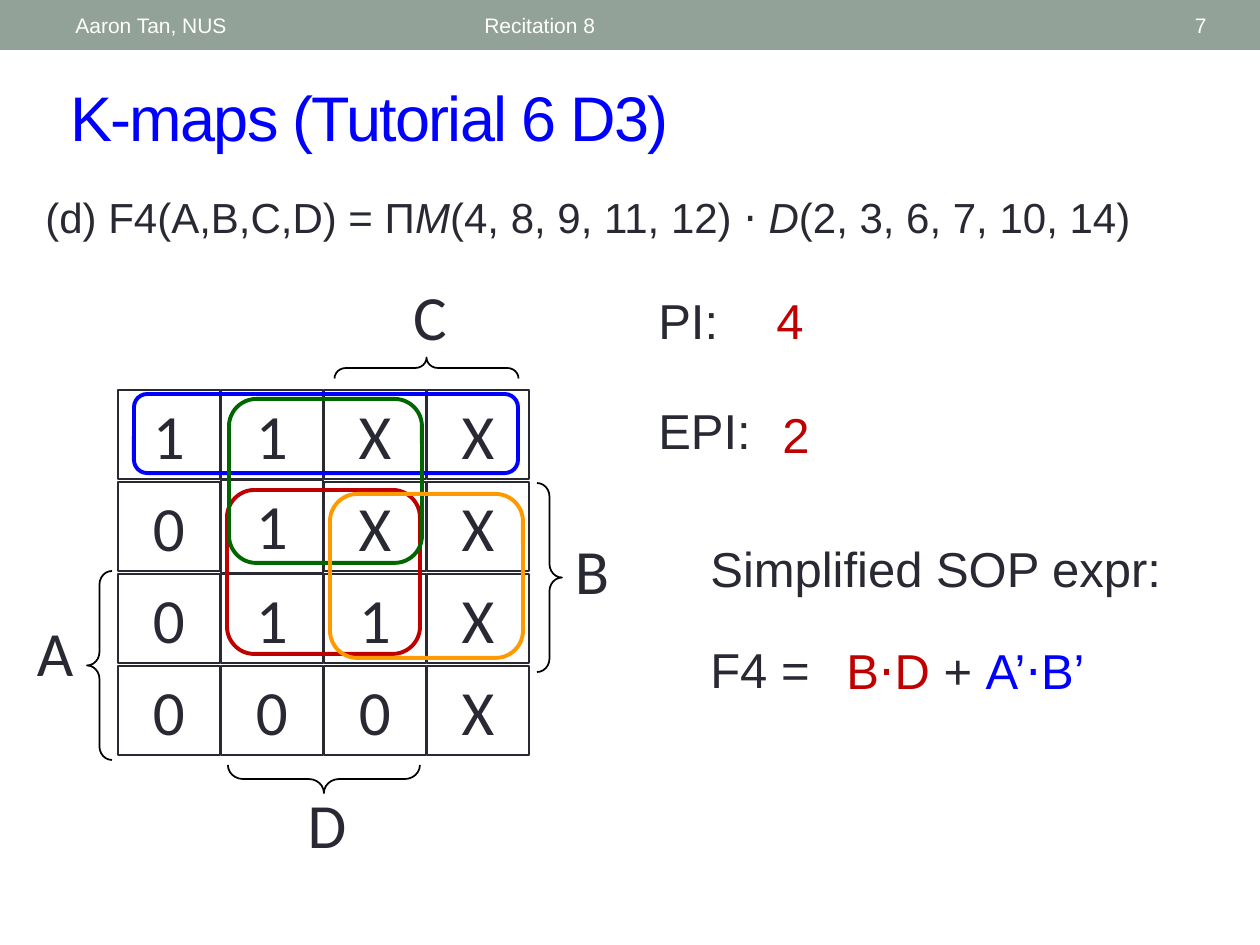
from pptx import Presentation
from pptx.dml.color import RGBColor
from pptx.enum.shapes import MSO_SHAPE
from pptx.enum.text import MSO_ANCHOR, MSO_AUTO_SIZE, PP_ALIGN
from pptx.util import Emu, Pt

EMU_PER_PX = 914400 / 126
INK, RED, BLUE, GREEN, ORANGE = "292934", "C00000", "0000FF", "006600", "FF9900"
WHITE, BLACK, SAGE = "FFFFFF", "000000", "93A299"


def px(length):
    return Emu(round(length * EMU_PER_PX))


def rgb(hex_string):
    return RGBColor.from_string(hex_string)


def apply(target, values):
    for name, value in values.items():
        setattr(target, name, value)


class SlideBuilder:
    """Holds the text style and the slide being drawn."""

    body = {"name": "Arial", "size": Pt(28)}
    small = {"name": "Arial", "size": Pt(12)}
    formula = {"name": "Arial", "size": Pt(24)}
    title = {"name": "Arial", "size": Pt(36)}
    kmap = {"name": "Calibri", "size": Pt(36)}

    def __init__(self, slide):
        self.slide = slide

    def fill_text(self, shape, runs, font, align=PP_ALIGN.LEFT, anchor=MSO_ANCHOR.TOP):
        """Fill a shape with one paragraph of (text, colour, italic) runs."""
        frame = shape.text_frame
        apply(frame, {"word_wrap": True, "vertical_anchor": anchor,
                      "auto_size": MSO_AUTO_SIZE.NONE})
        paragraph = frame.paragraphs[0]
        paragraph.alignment = align
        for text, colour, italic in runs:
            run = paragraph.add_run()
            run.text = text
            apply(run.font, {**font, "italic": italic})
            run.font.color.rgb = rgb(colour)
        return paragraph

    def text(self, box, runs, font, **layout):
        shape = self.slide.shapes.add_textbox(*map(px, box))
        return self.fill_text(shape, runs, font, **layout)

    def label(self, box, text, font, colour=INK, **layout):
        return self.text(box, [(text, colour, False)], font, **layout)

    def shape(self, kind, box, line=None, width=1, fill=None):
        shape = self.slide.shapes.add_shape(kind, *map(px, box))
        shape.shadow.inherit = False
        if fill:
            shape.fill.solid()
            shape.fill.fore_color.rgb = rgb(fill)
        else:
            shape.fill.background()
        if line:
            shape.line.color.rgb = rgb(line)
            shape.line.width = Pt(width)
        else:
            shape.line.fill.background()
        return shape

    def cell(self, box, value):
        shape = self.shape(MSO_SHAPE.RECTANGLE, box, INK)
        self.fill_text(shape, [(value, INK, False)], self.kmap, align=PP_ALIGN.CENTER)

    def brace(self, box, rotation):
        shape = self.shape(MSO_SHAPE.LEFT_BRACE, box, BLACK)
        shape.adjustments[0] = 0.54
        shape.rotation = rotation

    def loop(self, box, colour):
        self.shape(MSO_SHAPE.ROUNDED_RECTANGLE, box, colour, 2.25)


def draw_header(builder):
    builder.shape(MSO_SHAPE.RECTANGLE, (0, 0, 1260, 50), fill=SAGE)
    for left, width, text, align in (
        (63, 399, "Aaron Tan, NUS", PP_ALIGN.LEFT),
        (472, 567, "Recitation 8", PP_ALIGN.LEFT),
        (1099, 120, "7", PP_ALIGN.RIGHT),
    ):
        builder.label((left, 3, width, 45), text, builder.small, WHITE,
                      align=align, anchor=MSO_ANCHOR.MIDDLE)
    title = builder.label((58, 72, 1160, 88), "K-maps (Tutorial 6 D3)",
                          builder.title, BLUE, anchor=MSO_ANCHOR.MIDDLE)
    title.runs[0].font._element.set("spc", "-100")


def draw_question(builder):
    question = builder.text((33, 185, 1147, 88), [
        ("(d) F4(A,B,C,D) = Π", INK, False),
        ("M", INK, True),
        ("(4, 8, 9, 11, 12) ⋅ ", INK, False),
        ("D", INK, True),
        ("(2, 3, 6, 7, 10, 14)", INK, False),
    ], builder.formula)
    question.space_before = Pt(4.8)


def draw_kmap(builder):
    for row, values in enumerate(("11XX", "01XX", "011X", "000X")):
        for column, value in enumerate(values):
            # The cell at row 1, column 1 is slightly taller than the rest.
            top, height = (480, 93) if row == column == 1 else (390 + 92 * row, 89)
            builder.cell((118 + 103 * column, top, 102, height), value)

    for variable, left, top, brace, rotation in (
        ("A", 0, 607, (87, 571, 25, 189), 0),
        ("B", 537, 525, (537, 483, 25, 189), 180),
        ("C", 375, 271, (416, 276, 21, 184), 90),
        ("D", 272, 779, (310, 683, 28, 192), 270),
    ):
        builder.label((left, top, 110, 89), variable, builder.kmap,
                      align=PP_ALIGN.CENTER)
        builder.brace(brace, rotation)


def draw_loops(builder):
    builder.loop((227, 490, 193, 164), RED)
    builder.loop((134, 394, 384, 79), BLUE)
    builder.loop((229, 399, 193, 164), GREEN)
    builder.loop((330, 494, 193, 164), ORANGE)


def draw_answers(builder):
    for left, top, width, text, colour in (
        (646, 284, 137, "PI:", INK),
        (764, 284, 82, "4", RED),
        (646, 394, 137, "EPI:", INK),
        (770, 398, 82, "2", RED),
        (698, 532, 520, "Simplified SOP expr:", INK),
        (698, 633, 164, "F4 =", INK),
    ):
        builder.label((left, top, width, 72), text, builder.body, colour)
    builder.text((834, 634, 309, 72), [
        ("B⋅D ", RED, False), ("+ ", INK, False), ("A’⋅B’", BLUE, False),
    ], builder.body)


def main():
    presentation = Presentation()
    apply(presentation, {"slide_width": px(1260), "slide_height": px(945)})
    builder = SlideBuilder(presentation.slides.add_slide(presentation.slide_layouts[6]))
    for draw in (draw_header, draw_question, draw_kmap, draw_loops, draw_answers):
        draw(builder)
    presentation.save("out.pptx")


if __name__ == "__main__":
    main()
